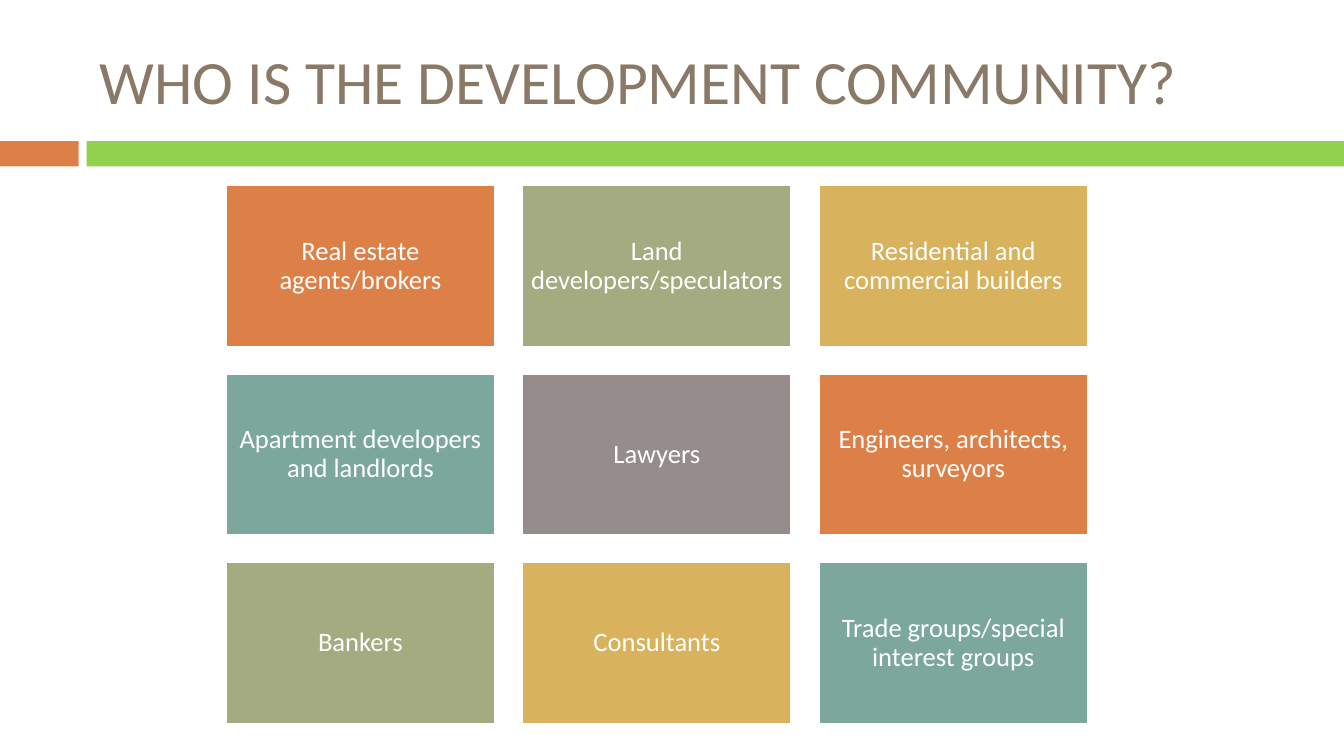
from pptx import Presentation
from pptx.dml.color import RGBColor
from pptx.enum import shapes, text
from pptx.util import Inches, Pt

ORANGE = RGBColor(0xDD, 0x80, 0x47)
GREEN = RGBColor(0x92, 0xD0, 0x50)
SAGE = RGBColor(0xA5, 0xAB, 0x81)
GOLD = RGBColor(0xD8, 0xB2, 0x5C)
TEAL = RGBColor(0x7B, 0xA7, 0x9D)
GREY = RGBColor(0x96, 0x8C, 0x8C)
BROWN = RGBColor(0x8A, 0x79, 0x67)
WHITE = RGBColor(0xFF, 0xFF, 0xFF)

TITLE = "WHO IS THE DEVELOPMENT COMMUNITY?"
GROUPS = [
    ("Real estate agents/brokers", ORANGE),
    ("Land developers/speculators", SAGE),
    ("Residential and commercial builders", GOLD),
    ("Apartment developers and landlords", TEAL),
    ("Lawyers", GREY),
    ("Engineers, architects, surveyors", ORANGE),
    ("Bankers", SAGE),
    ("Consultants", GOLD),
    ("Trade groups/special interest groups", TEAL),
]

SLIDE_W, SLIDE_H = 13.33, 7.5
BAND_TOP, BAND_H = 1.4, 0.25
BAND_SPLIT, BAND_GAP = 0.78, 0.08
COLUMNS = 3
GRID_LEFT, GRID_TOP = 2.24, 1.84
TILE_W, TILE_H, TILE_GAP = 2.67, 1.6, 0.27
TILE_FRAME = dict(
    word_wrap=True, vertical_anchor=text.MSO_ANCHOR.MIDDLE,
    margin_left=Inches(0.08), margin_right=Inches(0.08),
    margin_top=Inches(0.08), margin_bottom=Inches(0.08),
)
TITLE_FRAME = dict(
    word_wrap=True, vertical_anchor=text.MSO_ANCHOR.MIDDLE,
    auto_size=text.MSO_AUTO_SIZE.NONE,
)


def set_all(target, values):
    for name, value in values.items():
        setattr(target, name, value)


def write(sp, words, frame, size, color, align, spacing):
    tf = sp.text_frame
    tf.text = words
    set_all(tf, frame)
    p = tf.paragraphs[0]
    set_all(p, dict(alignment=align, line_spacing=spacing))
    set_all(p.runs[0].font, dict(name="Calibri", size=Pt(size)))
    p.runs[0].font.color.rgb = color


def add_rect(slide, left, top, width, height, fill):
    sp = slide.shapes.add_shape(
        shapes.MSO_SHAPE.RECTANGLE,
        *(Inches(v) for v in (left, top, width, height)))
    sp.shadow.inherit = False
    sp.fill.solid()
    sp.fill.fore_color.rgb = fill
    sp.line.fill.background()
    return sp


def main():
    prs = Presentation()
    prs.slide_width, prs.slide_height = Inches(SLIDE_W), Inches(SLIDE_H)
    slide = prs.slides.add_slide(prs.slide_layouts[5])

    title = slide.shapes.title
    set_all(title, dict(left=Inches(0.89), top=Inches(0.25),
                        width=Inches(11.89), height=Inches(1.08)))
    write(title, TITLE, TITLE_FRAME, 44, BROWN, text.PP_ALIGN.LEFT, 1.0)

    band_left = BAND_SPLIT + BAND_GAP
    add_rect(slide, 0, BAND_TOP, BAND_SPLIT, BAND_H, ORANGE)
    add_rect(slide, band_left, BAND_TOP, SLIDE_W - band_left, BAND_H, GREEN)

    for i, (words, fill) in enumerate(GROUPS):
        row, col = divmod(i, COLUMNS)
        sp = add_rect(slide, GRID_LEFT + col * (TILE_W + TILE_GAP),
                      GRID_TOP + row * (TILE_H + TILE_GAP),
                      TILE_W, TILE_H, fill)
        sp.line.color.rgb = WHITE
        sp.line.width = Pt(1.5)
        write(sp, words, TILE_FRAME, 19, WHITE, text.PP_ALIGN.CENTER, 0.9)

    prs.save("out.pptx")


if __name__ == "__main__":
    main()
